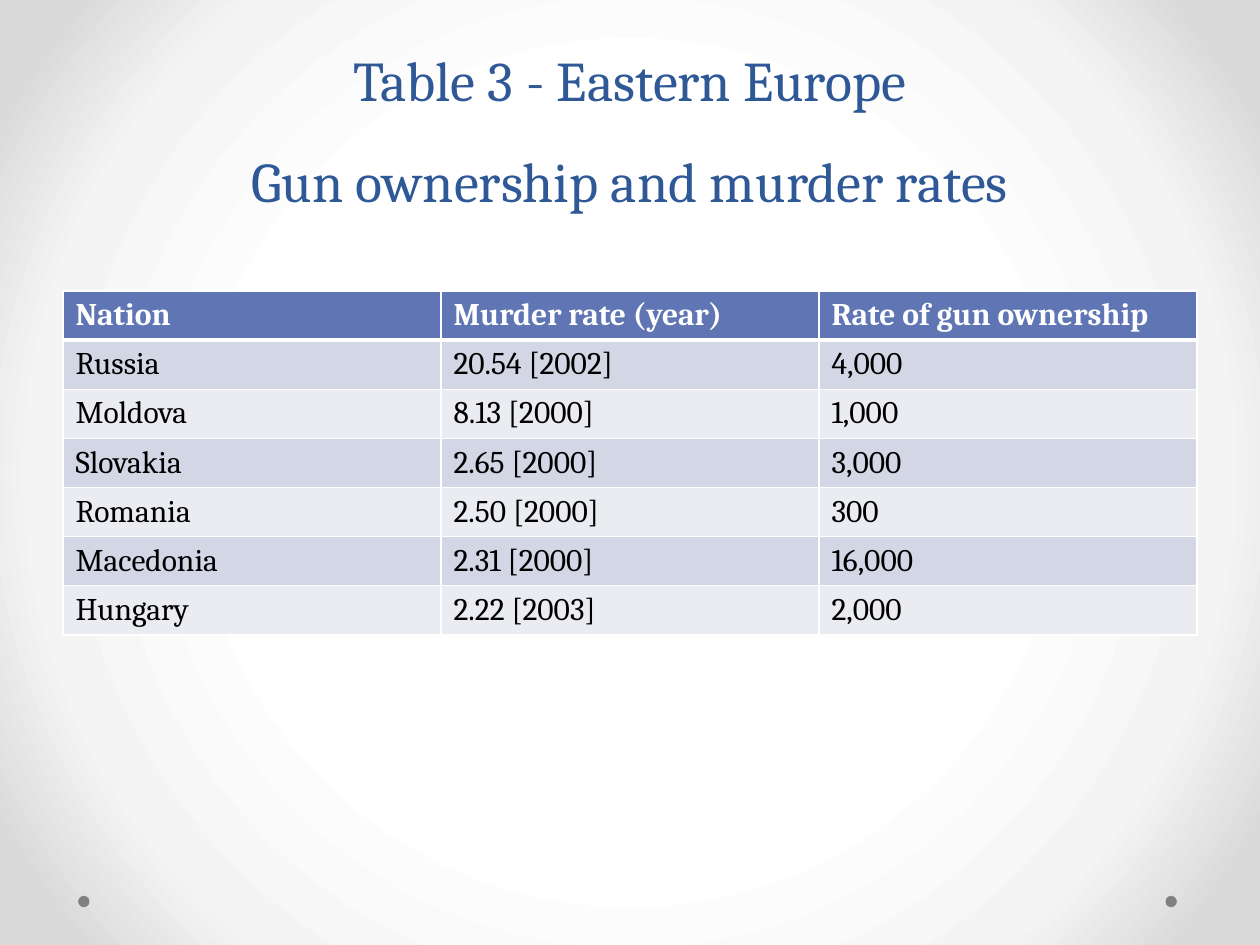
from lxml.etree import SubElement
from pptx import Presentation
from pptx.dml.color import RGBColor
from pptx.enum.shapes import MSO_SHAPE
from pptx.enum.text import MSO_ANCHOR, MSO_AUTO_SIZE, PP_ALIGN
from pptx.oxml import parse_xml
from pptx.oxml.ns import nsdecls, qn
from pptx.util import Inches, Pt

COLORS = {
    "title": "2F5897", "header": "6076B4", "odd": "D2D6E5", "even": "EAECF2",
    "white": "FFFFFF", "black": "000000", "dot": "808080",
    "mist": "F4F4F4", "edge": "DADADA",
}
ROWS = [
    ("Nation", "Murder rate (year)", "Rate of gun ownership"),
    ("Russia", "20.54 [2002]", "4,000"),
    ("Moldova", "8.13 [2000]", "1,000"),
    ("Slovakia", "2.65 [2000]", "3,000"),
    ("Romania", "2.50 [2000]", "300"),
    ("Macedonia", "2.31 [2000]", "16,000"),
    ("Hungary", "2.22 [2003]", "2,000"),
]


class SlideBuilder:
    """Hold the slide style and add each kind of element to the current page."""

    font = "Cambria"

    def __init__(self, page):
        self.page = page

    def color(self, name):
        return RGBColor.from_string(COLORS[name])

    def background(self, stops):
        self.page.background.fill.solid()
        properties = self.page.element.find(".//" + qn("p:bgPr"))
        stop_xml = "".join(
            f'<a:gs pos="{percent * 1000}"><a:srgbClr val="{COLORS[name]}"/></a:gs>'
            for percent, name in stops
        )
        gradient = parse_xml(
            f'<a:gradFill {nsdecls("a")} rotWithShape="1"><a:gsLst>{stop_xml}</a:gsLst>'
            '<a:path path="circle"><a:fillToRect l="50000" t="50000" r="50000" b="50000"/>'
            "</a:path></a:gradFill>"
        )
        properties.replace(properties[0], gradient)

    def dot(self, left, top, size):
        shape = self.page.shapes.add_shape(
            MSO_SHAPE.OVAL, Inches(left), Inches(top), Inches(size), Inches(size)
        )
        shape.shadow.inherit = False
        shape.fill.solid()
        shape.fill.fore_color.rgb = self.color("dot")
        shape.line.fill.background()

    def span(self, para, text, size, color, bold=False):
        span = para.add_run()
        span.text = text
        span.font.name = self.font
        span.font.size = Pt(size)
        span.font.bold = bold
        span.font.color.rgb = self.color(color)

    def title(self, lines, left, top, width, height):
        box = self.page.shapes.title
        box.left, box.top = Inches(left), Inches(top)
        box.width, box.height = Inches(width), Inches(height)
        frame = box.text_frame
        frame.word_wrap = True
        frame.auto_size = MSO_AUTO_SIZE.NONE
        frame.vertical_anchor = MSO_ANCHOR.BOTTOM
        para = frame.paragraphs[0]
        para.alignment = PP_ALIGN.CENTER
        para.line_spacing = Pt(58)
        for index, line in enumerate(lines):
            if index:
                para.add_line_break()
            self.span(para, line, 32, "title")

    def borders(self, cell, widths):
        properties = cell._tc.get_or_add_tcPr()
        for side, width in widths.items():
            line = SubElement(properties, qn(f"a:{side}"), w=str(Pt(width)))
            fill = SubElement(line, qn("a:solidFill"))
            SubElement(fill, qn("a:srgbClr"), val=COLORS["white"])

    def table(self, rows, left, top, width, row_height):
        table = self.page.shapes.add_table(
            len(rows), len(rows[0]), Inches(left), Inches(top),
            Inches(width), Inches(row_height * len(rows)),
        ).table
        for row_index, row in enumerate(rows):
            header = row_index == 0
            fill = "header" if header else "odd" if row_index % 2 else "even"
            widths = {
                "lnL": 1, "lnR": 1,
                "lnT": 3 if row_index == 1 else 1, "lnB": 3 if header else 1,
            }
            for column_index, text in enumerate(row):
                cell = table.cell(row_index, column_index)
                self.borders(cell, widths)
                cell.fill.solid()
                cell.fill.fore_color.rgb = self.color(fill)
                para = cell.text_frame.paragraphs[0]
                self.span(para, text, 18, "white" if header else "black", header)


def main():
    deck = Presentation()
    deck.slide_width, deck.slide_height = Inches(10), Inches(7.5)
    builder = SlideBuilder(deck.slides.add_slide(deck.slide_layouts[5]))
    builder.background([(50, "white"), (76, "mist"), (92, "edge")])
    for left in (9.25, 0.62):
        builder.dot(left, 7.11, 0.09)
    builder.title(
        ["Table 3 - Eastern Europe", "Gun ownership and murder rates"], 0.5, 0, 9, 1.75
    )
    builder.table(ROWS, 0.5, 2.31, 9, 0.39)
    deck.save("out.pptx")


if __name__ == "__main__":
    main()
